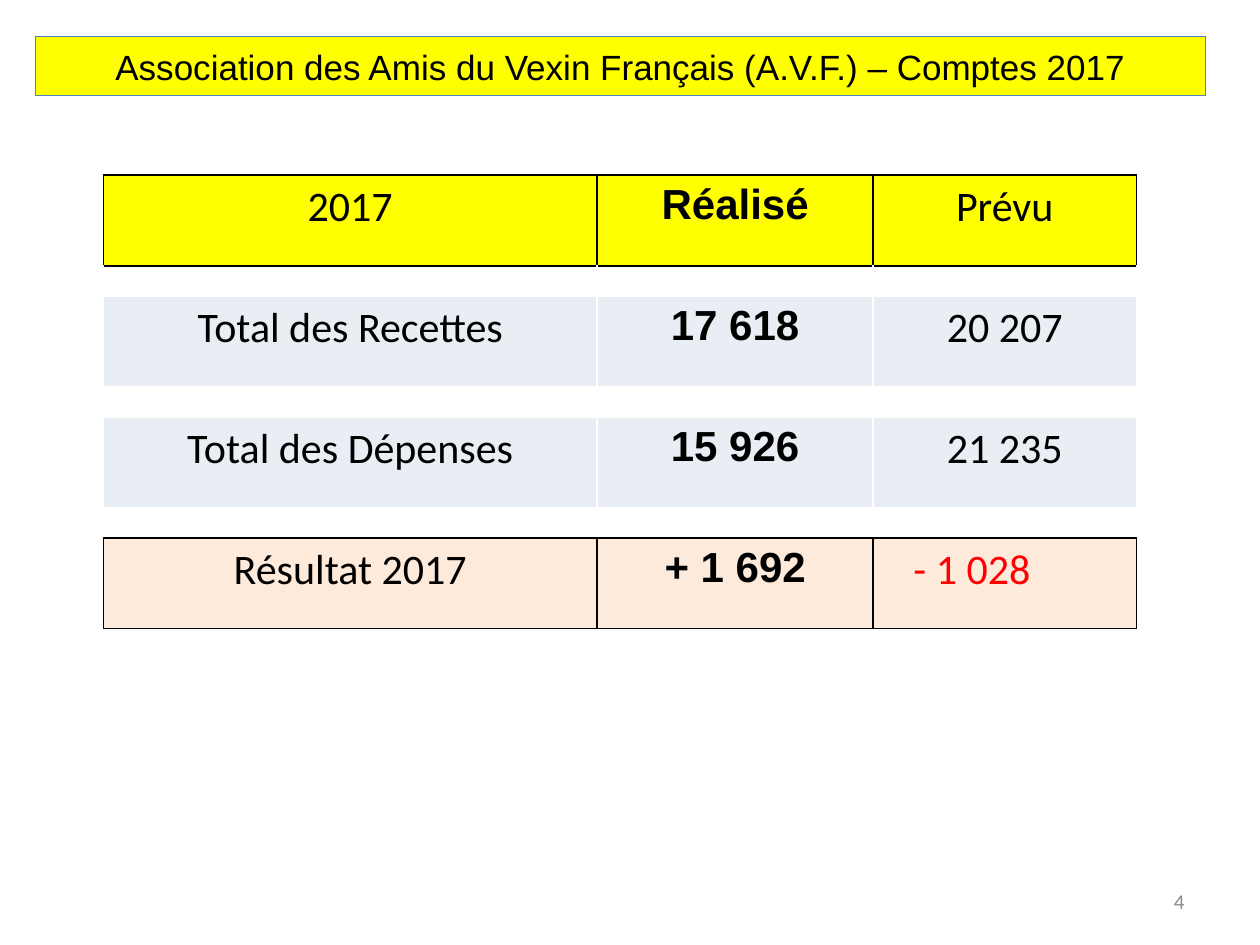
import pptx
import pptx.dml.color
import pptx.enum.text
import pptx.oxml
import pptx.oxml.ns
import pptx.util
from pptx.util import Inches

COLORS = {
    "yellow": "FFFF00", "blue": "4F81BD", "black": "000000", "white": "FFFFFF",
    "pale_blue": "E9EDF4", "peach": "FDEADA", "red": "FF0000", "grey": "8C8C8C",
}
ALIGN = pptx.enum.text.PP_ALIGN
MIDDLE = pptx.enum.text.MSO_ANCHOR.MIDDLE

COLUMN_WIDTHS = [3.92, 2.19, 2.09]
ROW_HEIGHT, GAP_HEIGHT = 0.72, 0.24
# Labels, fill and border of each filled row; a narrow empty row separates them.
ACCOUNTS = [
    (["2017", "Réalisé", "Prévu"], "yellow", "black"),
    (["Total des Recettes", "17 618", "20 207"], "pale_blue", "white"),
    (["Total des Dépenses", "15 926", "21 235"], "pale_blue", "white"),
    (["Résultat 2017", "+ 1 692", "- 1 028"], "peach", "black"),
]


def rgb(name):
    return pptx.dml.color.RGBColor.from_string(COLORS[name])


def write(frame, text, size=24, font="Calibri", color="black", bold=False, align=ALIGN.CENTER):
    para = frame.paragraphs[0]
    para.alignment = align
    span = para.add_run()
    span.text = text
    span.font.size = pptx.util.Pt(size)
    span.font.name = font
    span.font.bold = bold
    span.font.color.rgb = rgb(color)


def set_borders(cell, top, bottom, sides):
    """Draw 1 pt cell borders; they must precede the fill in the cell XML."""
    properties = cell._tc.get_or_add_tcPr()
    edges = {"lnL": sides, "lnR": sides, "lnT": top, "lnB": bottom}
    for index, (edge, color) in enumerate(edges.items()):
        line = pptx.oxml.parse_xml(
            f'<a:{edge} {pptx.oxml.ns.nsdecls("a")} w="12700"><a:solidFill>'
            f'<a:srgbClr val="{COLORS[color]}"/></a:solidFill></a:{edge}>')
        properties.insert(index, line)


def shrink_empty_cell(cell):
    """Let an empty cell be as low as its row."""
    cell.margin_top = cell.margin_bottom = 0
    end = pptx.oxml.parse_xml(f'<a:endParaRPr {pptx.oxml.ns.nsdecls("a")} sz="800"/>')
    cell.text_frame.paragraphs[0]._p.append(end)


def add_title(page):
    title = page.shapes.title
    title.left, title.top = Inches(0.28), Inches(0.29)
    title.width, title.height = Inches(9.29), Inches(0.47)
    title.fill.solid()
    title.fill.fore_color.rgb = rgb("yellow")
    title.line.color.rgb = rgb("blue")
    title.line.width = pptx.util.Pt(0.75)
    title.text_frame.vertical_anchor = MIDDLE
    write(title.text_frame, "Association des Amis du Vexin Français (A.V.F.) – Comptes 2017",
          size=20, font="Arial")


def fill_account_row(table, row, labels, fill, border):
    for column, label in enumerate(labels):
        cell = table.cell(row, column)
        cell.fill.solid()
        cell.fill.fore_color.rgb = rgb(fill)
        set_borders(cell, border, border, border)
        realised = column == 1
        deficit = label.startswith("-")
        if deficit:
            cell.margin_left = Inches(0.32)
        write(cell.text_frame, label, font="Arial" if realised else "Calibri", bold=realised,
              color="red" if deficit else "black",
              align=ALIGN.LEFT if deficit else ALIGN.CENTER)


def fill_gap_row(table, row, top, bottom):
    for cell in table.rows[row].cells:
        cell.fill.background()
        set_borders(cell, top, bottom, "white")
        shrink_empty_cell(cell)


def add_accounts_table(page):
    row_count = 2 * len(ACCOUNTS) - 1
    height = len(ACCOUNTS) * ROW_HEIGHT + (len(ACCOUNTS) - 1) * GAP_HEIGHT
    table = page.shapes.add_table(
        row_count, len(COLUMN_WIDTHS), Inches(0.82), Inches(1.39),
        Inches(sum(COLUMN_WIDTHS)), Inches(height)).table
    table.first_row = table.horz_banding = False
    for column, width in zip(table.columns, COLUMN_WIDTHS):
        column.width = Inches(width)
    for index, row in enumerate(table.rows):
        row.height = Inches(GAP_HEIGHT if index % 2 else ROW_HEIGHT)
    for index, (labels, fill, border) in enumerate(ACCOUNTS):
        fill_account_row(table, 2 * index, labels, fill, border)
        if index:
            fill_gap_row(table, 2 * index - 1, ACCOUNTS[index - 1][2], border)


def add_page_number(page):
    box = page.shapes.add_textbox(Inches(7.17), Inches(6.95), Inches(2.33), Inches(0.4))
    box.text_frame.word_wrap = True
    box.text_frame.vertical_anchor = MIDDLE
    write(box.text_frame, "4", size=12, color="grey", align=ALIGN.RIGHT)


def main():
    deck = pptx.Presentation()
    deck.slide_width, deck.slide_height = Inches(10), Inches(7.5)
    page = deck.slides.add_slide(deck.slide_layouts[5])
    add_title(page)
    add_accounts_table(page)
    add_page_number(page)
    deck.save("out.pptx")


if __name__ == "__main__":
    main()
